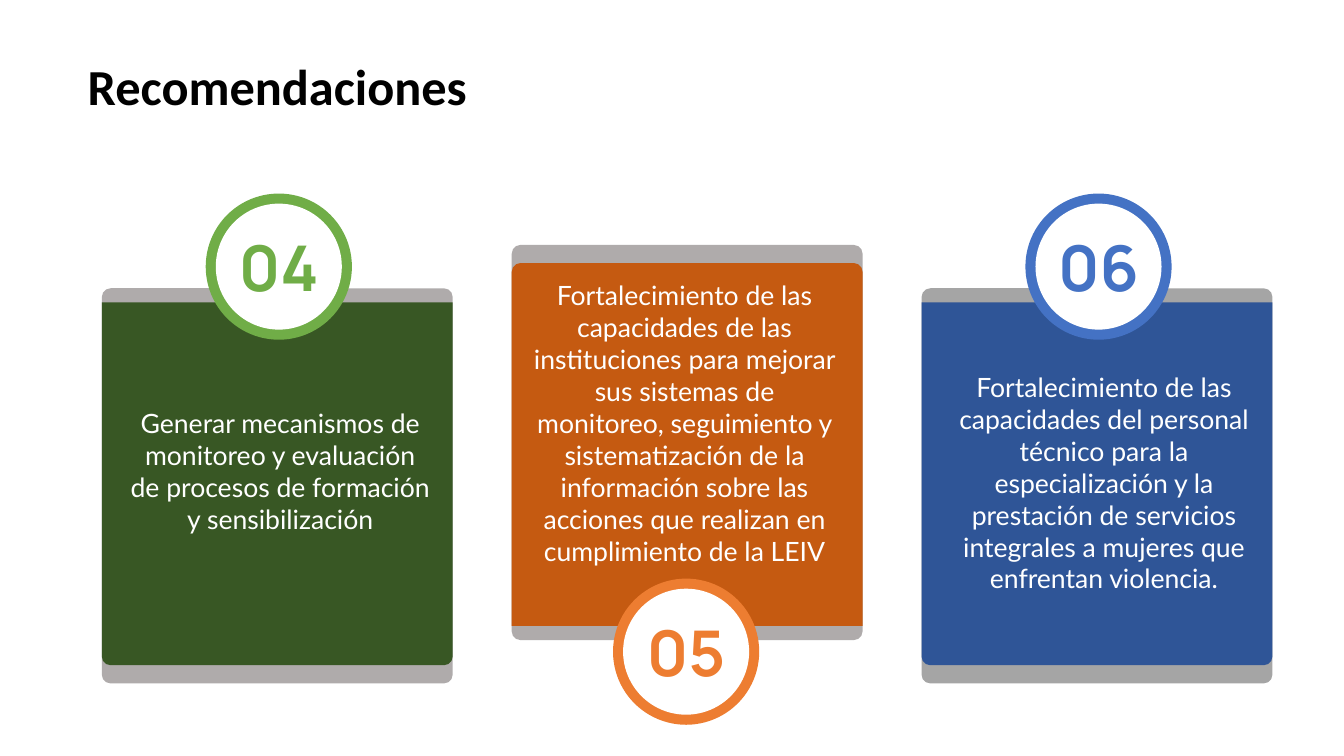
from dataclasses import dataclass

from pptx import Presentation
from pptx.dml.color import RGBColor
from pptx.enum.shapes import MSO_SHAPE
from pptx.enum.text import MSO_ANCHOR, PP_ALIGN
from pptx.slide import Slide
from pptx.text.text import TextFrame
from pptx.util import Inches, Pt

BLACK = RGBColor(0x00, 0x00, 0x00)
WHITE = RGBColor(0xFF, 0xFF, 0xFF)
WARM_GREY = RGBColor(0xAF, 0xAB, 0xAB)
GREY = RGBColor(0xA5, 0xA5, 0xA5)
GREEN = RGBColor(0x70, 0xAD, 0x47)
DARK_GREEN = RGBColor(0x38, 0x57, 0x24)
ORANGE = RGBColor(0xED, 0x7D, 0x31)
DARK_ORANGE = RGBColor(0xC5, 0x5A, 0x11)
BLUE = RGBColor(0x44, 0x72, 0xC4)
DARK_BLUE = RGBColor(0x2F, 0x55, 0x97)

CARD_LEFT, CARD_PITCH = 1.01, 4.065
CARD_WIDTH, CARD_HEIGHT, PANEL_HEIGHT = 3.48, 3.92, 3.6
BADGE_SIZE, RING_WIDTH = 1.45, 0.1
NUMBER_WIDTH, NUMBER_HEIGHT = 0.81, 0.85
BODY_WIDTH = 3.06
CORNER = 0.025


@dataclass(frozen=True)
class Recommendation:
    number: str
    body: str
    accent: RGBColor
    panel: RGBColor
    backing: RGBColor
    top: float
    badge_left: float
    body_left: float
    body_top: float
    body_height: float
    badge_below: bool = False


RECOMMENDATIONS = [
    Recommendation(
        "04",
        "Generar mecanismos de monitoreo y evaluación de procesos de formación "
        "y sensibilización",
        GREEN, DARK_GREEN, WARM_GREY, 2.86, 2.04, 1.25, 4.02, 1.65),
    Recommendation(
        "05",
        "Fortalecimiento de las capacidades de las instituciones para mejorar "
        "sus sistemas de monitoreo, seguimiento y sistematización de la "
        "información sobre las acciones que realizan en cumplimiento de la LEIV",
        ORANGE, DARK_ORANGE, WARM_GREY, 2.43, 6.08, 5.26, 2.75, 2.93,
        badge_below=True),
    Recommendation(
        "06",
        "Fortalecimiento de las capacidades del personal técnico para la "
        "especialización y la prestación de servicios integrales a mujeres que "
        "enfrentan violencia.",
        BLUE, DARK_BLUE, GREY, 2.86, 10.17, 9.42, 3.66, 2.29),
]


def write(frame: TextFrame, text: str, *, font: str, size: float, color: RGBColor,
          bold: bool = False, align: PP_ALIGN = PP_ALIGN.CENTER,
          anchor: MSO_ANCHOR = MSO_ANCHOR.TOP, inset: float = 0,
          wrap: bool = True) -> None:
    frame.word_wrap = wrap
    frame.vertical_anchor = anchor
    frame.margin_left = frame.margin_right = Inches(inset)
    frame.margin_top = frame.margin_bottom = Inches(inset)
    paragraph = frame.paragraphs[0]
    paragraph.alignment = align
    run = paragraph.add_run()
    run.text = text
    run.font.name = font
    run.font.size = Pt(size)
    run.font.bold = bold
    run.font.color.rgb = color


def add_filled(slide: Slide, preset: MSO_SHAPE, left: float, top: float,
               width: float, height: float, fill: RGBColor,
               corners: tuple[float, ...] = ()) -> None:
    shape = slide.shapes.add_shape(
        preset, Inches(left), Inches(top), Inches(width), Inches(height))
    shape.shadow.inherit = False
    shape.fill.solid()
    shape.fill.fore_color.rgb = fill
    shape.line.fill.background()
    for index, corner in enumerate(corners):
        shape.adjustments[index] = corner


def add_textbox(slide: Slide, left: float, top: float, width: float,
                height: float) -> TextFrame:
    return slide.shapes.add_textbox(
        Inches(left), Inches(top), Inches(width), Inches(height)).text_frame


def add_badge(slide: Slide, item: Recommendation) -> None:
    top = item.top + (3.31 if item.badge_below else -0.94)
    for inset, fill in ((0, item.accent), (RING_WIDTH, WHITE)):
        diameter = BADGE_SIZE - 2 * inset
        add_filled(slide, MSO_SHAPE.OVAL, item.badge_left + inset, top + inset,
                   diameter, diameter, fill)
    number = add_textbox(slide, item.badge_left + (BADGE_SIZE - NUMBER_WIDTH) / 2,
                         top + (BADGE_SIZE - NUMBER_HEIGHT) / 2,
                         NUMBER_WIDTH, NUMBER_HEIGHT)
    write(number, item.number, font="Manrope", size=45, color=item.accent,
          bold=True, anchor=MSO_ANCHOR.MIDDLE, wrap=False)


def add_card(slide: Slide, left: float, item: Recommendation) -> None:
    add_filled(slide, MSO_SHAPE.ROUNDED_RECTANGLE, left, item.top,
               CARD_WIDTH, CARD_HEIGHT, item.backing, (CORNER,))
    # The panel is square on the side that carries the badge.
    corners = (CORNER, 0) if item.badge_below else (0, CORNER)
    panel_top = item.top + (0.18 if item.badge_below else 0.14)
    add_filled(slide, MSO_SHAPE.ROUND_2_SAME_RECTANGLE, left, panel_top,
               CARD_WIDTH, PANEL_HEIGHT, item.panel, corners)
    add_badge(slide, item)
    body = add_textbox(slide, item.body_left, item.body_top,
                       BODY_WIDTH, item.body_height)
    write(body, item.body, font="Lato", size=19, color=WHITE, inset=0.02)


def main() -> None:
    presentation = Presentation()
    presentation.slide_width = Inches(13.33)
    presentation.slide_height = Inches(7.5)
    slide = presentation.slides.add_slide(presentation.slide_layouts.get_by_name("Title Only"))

    title = slide.shapes.title
    title.left, title.top = Inches(0.82), Inches(0.5)
    title.width, title.height = Inches(3.88), Inches(0.6)
    write(title.text_frame, "Recomendaciones", font="Calibri", size=36,
          color=BLACK, bold=True, align=PP_ALIGN.LEFT, inset=0.05, wrap=False)

    for column, item in enumerate(RECOMMENDATIONS):
        add_card(slide, CARD_LEFT + column * CARD_PITCH, item)

    presentation.save("out.pptx")


if __name__ == "__main__":
    main()
